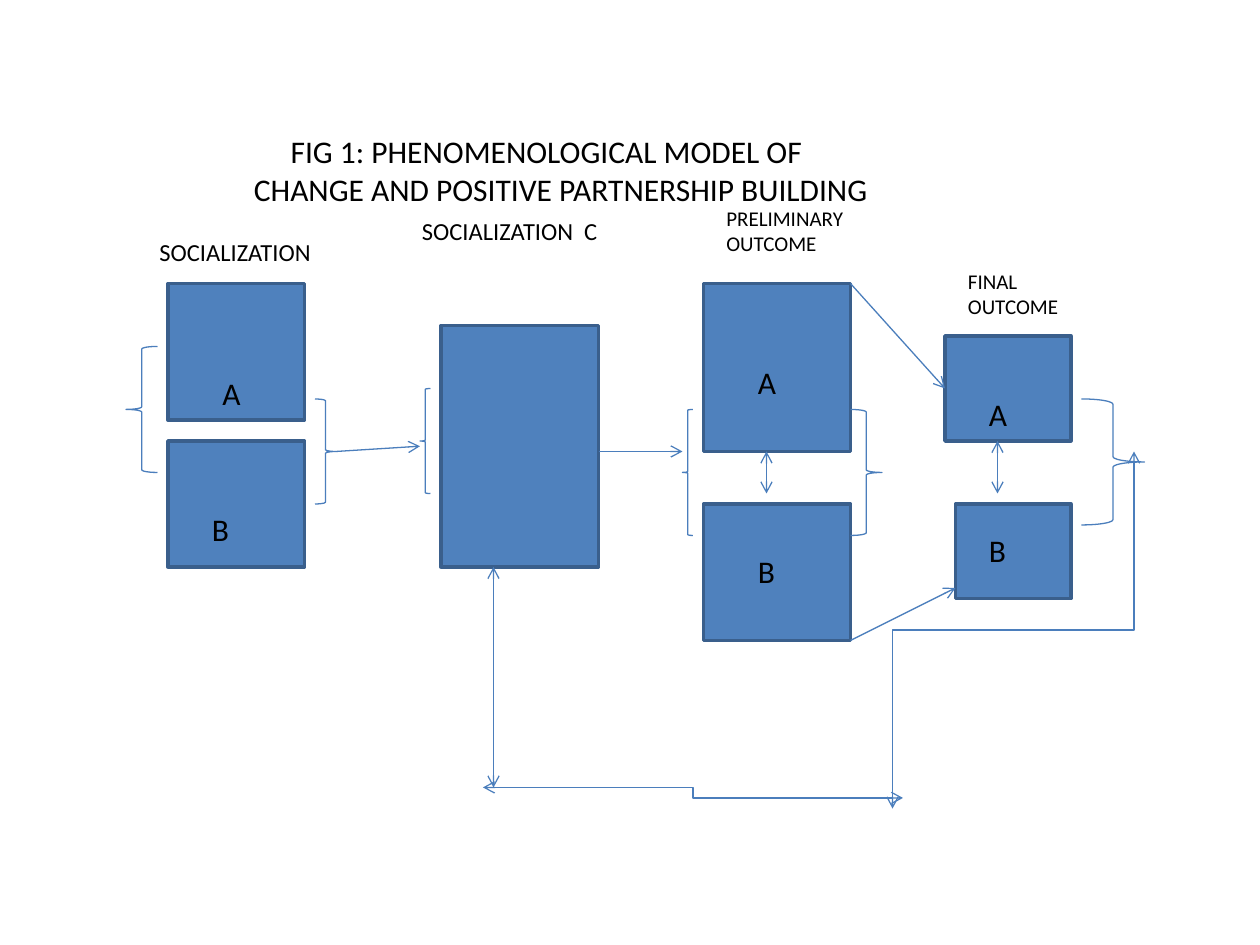
from dataclasses import dataclass

from pptx import Presentation
from pptx.dml.color import RGBColor
from pptx.enum.shapes import MSO_CONNECTOR, MSO_SHAPE
from pptx.enum.text import MSO_AUTO_SIZE
from pptx.oxml.ns import qn
from pptx.util import Pt
from lxml import etree

RECT = MSO_SHAPE.RECTANGLE
LEFT, RIGHT = MSO_SHAPE.LEFT_BRACE, MSO_SHAPE.RIGHT_BRACE
LINE, ELBOW = MSO_CONNECTOR.STRAIGHT, MSO_CONNECTOR.ELBOW
FIT = MSO_AUTO_SIZE.SHAPE_TO_FIT_TEXT


@dataclass(frozen=True)
class Theme:
    font: str = "Calibri"
    ink: RGBColor = RGBColor(0, 0, 0)
    fill: RGBColor = RGBColor(0x4F, 0x81, 0xBD)
    edge: RGBColor = RGBColor(0x3A, 0x5F, 0x8C)
    wire: RGBColor = RGBColor(0x4B, 0x7E, 0xBC)
    large: float = 18
    mid: float = 14
    small: float = 12
    thick: float = 2
    thin: float = 0.75


THEME = Theme()


@dataclass
class Region:
    """Draws parts at offsets from its own top left corner."""
    slide: object
    x: float
    y: float

    def text(self, x, y, w, words, size, indent=0, lines=1):
        high = size * 1.2 * lines + 7.2
        box = self.slide.shapes.add_textbox(
            Pt(self.x + x), Pt(self.y + y), Pt(w), Pt(high))
        frame = box.text_frame
        frame.word_wrap = True
        frame.auto_size = FIT
        para = frame.paragraphs[0]
        if indent:
            para._p.get_or_add_pPr().set("indent", str(Pt(indent)))
        run = para.add_run()
        run.text = words
        run.font.name = THEME.font
        run.font.size = Pt(size)
        run.font.color.rgb = THEME.ink

    def shape(self, kind, x, y, w, h):
        part = self.slide.shapes.add_shape(
            kind, Pt(self.x + x), Pt(self.y + y), Pt(w), Pt(h))
        part.shadow.inherit = False
        return part

    def block(self, x, y, w, h):
        part = self.shape(RECT, x, y, w, h)
        part.fill.solid()
        part.fill.fore_color.rgb = THEME.fill
        part.line.color.rgb = THEME.edge
        part.line.width = Pt(THEME.thick)

    def brace(self, kind, x, y, w, h):
        part = self.shape(kind, x, y, w, h)
        part.fill.background()
        part.line.color.rgb = THEME.wire
        part.line.width = Pt(THEME.thin)

    def arrow(self, x1, y1, x2, y2, both=False, kind=LINE):
        link = self.slide.shapes.add_connector(
            kind, Pt(self.x + x1), Pt(self.y + y1),
            Pt(self.x + x2), Pt(self.y + y2))
        link.line.color.rgb = THEME.wire
        link.line.width = Pt(THEME.thin)
        props = link._element.spPr
        line = props.find(qn("a:ln"))
        for end in ("a:headEnd", "a:tailEnd") if both else ("a:tailEnd",):
            etree.SubElement(line, qn(end)).set("type", "arrow")
        etree.SubElement(props, qn("a:effectLst"))
        return link


def title(slide, x, y):
    area = Region(slide, x, y)
    area.text(0, 0, 378, "FIG 1: PHENOMENOLOGICAL MODEL OF CHANGE AND "
              "POSITIVE PARTNERSHIP BUILDING", THEME.large, 21, 2)


def start(slide, x, y):
    area = Region(slide, x, y)
    area.block(0, 0, 78, 78)
    area.block(0, 90, 78, 72)
    area.text(-12, -30, 108, "SOCIALIZATION", THEME.mid)
    area.text(24, 48, 36, "A", THEME.large)
    area.text(18, 126, 36, "B", THEME.large)
    area.brace(LEFT, -24, 36, 18, 72)
    area.brace(RIGHT, 84, 66, 12, 60)


def centre(slide, x, y):
    area = Region(slide, x, y)
    area.block(0, 0, 90, 138)
    area.text(-18, -66, 126, "SOCIALIZATION  C", THEME.mid)
    area.brace(LEFT, -12, 36, 6, 60)


def interim(slide, x, y):
    area = Region(slide, x, y)
    area.block(0, 0, 84, 96)
    area.block(0, 126, 84, 78)
    area.text(6, -48, 102, "PRELIMINARY OUTCOME", THEME.small, lines=2)
    area.text(24, 42, 48, "A", THEME.large)
    area.text(24, 150, 30, "B", THEME.large)
    area.brace(LEFT, -12, 72, 6, 72)
    area.brace(RIGHT, 84, 72, 18, 72)
    area.arrow(36, 96, 36, 120, both=True)


def final(slide, x, y):
    area = Region(slide, x, y)
    area.block(0, 0, 72, 60)
    area.block(6, 96, 66, 54)
    area.text(6, -42, 90, "FINAL OUTCOME", THEME.small, lines=2)
    area.text(18, 30, 36, "A", THEME.large)
    area.text(18, 108, 36, "B", THEME.large)
    area.brace(RIGHT, 78, 36, 36, 72)
    area.arrow(30, 60, 30, 90, both=True)


def flow(slide, x, y):
    """Arrows that lead from one stage to the next."""
    area = Region(slide, x, y)
    area.arrow(0, 96, 48, 93)
    area.arrow(150, 96, 198, 96)
    area.arrow(294, 0, 348, 60)
    area.arrow(294, 204, 354, 174)


def loop(slide, x, y):
    """Feedback path from the final outcome to the centre stage."""
    area = Region(slide, x, y)
    drop = area.arrow(201, 33, 405, 171, both=True, kind=ELBOW)
    drop._element.spPr.find(qn("a:xfrm")).set("rot", str(90 * 60000))
    area.arrow(240, 198, 0, 192, both=True, kind=ELBOW)
    area.arrow(6, 66, 6, 192, both=True)


def main():
    deck = Presentation()
    deck.slide_width, deck.slide_height = Pt(720), Pt(540)
    slide = deck.slides.add_slide(deck.slide_layouts[6])
    title(slide, 138, 72)
    start(slide, 96, 162)
    centre(slide, 252, 186)
    interim(slide, 402, 162)
    final(slide, 540, 192)
    flow(slide, 192, 162)
    loop(slide, 276, 258)
    deck.save("out.pptx")


if __name__ == "__main__":
    main()
